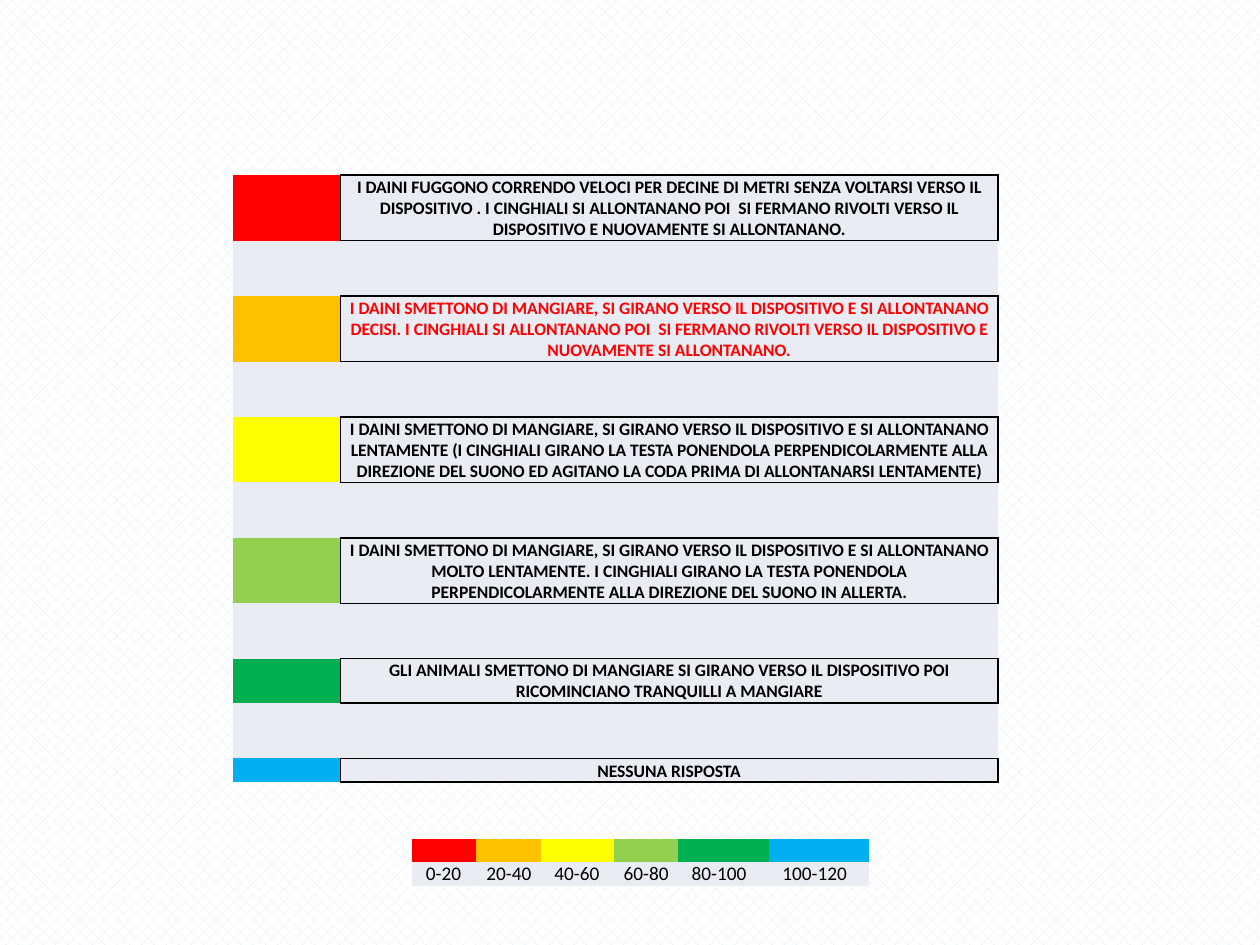
from lxml import etree
from pptx import Presentation
from pptx.dml.color import RGBColor
from pptx.enum.dml import MSO_PATTERN
from pptx.enum.text import MSO_ANCHOR, PP_ALIGN
from pptx.oxml.ns import qn
from pptx.util import Inches, Pt

PATTERN = MSO_PATTERN.PERCENT_30
CENTER, LEFT = PP_ALIGN.CENTER, PP_ALIGN.LEFT
BOTTOM, MIDDLE = MSO_ANCHOR.BOTTOM, MSO_ANCHOR.MIDDLE


def color(value):
    return RGBColor.from_string(value)


class SlideBuilder:
    font = "Calibri"
    black = "000000"
    panel = "E9ECF3"
    border_width = Pt(0.91)

    def __init__(self, deck):
        self.page = deck.slides.add_slide(deck.slide_layouts[6])

    def background(self, foreground, background):
        fill = self.page.background.fill
        fill.patterned()
        fill.pattern = PATTERN
        fill.fore_color.rgb = color(foreground)
        fill.back_color.rgb = color(background)

    def table(self, left, top, widths, heights):
        frame = self.page.shapes.add_table(
            len(heights), len(widths), Inches(left), Inches(top),
            Inches(sum(widths)), Inches(sum(heights)))
        table = frame.table
        table.first_row = table.horz_banding = False
        for column, width in zip(table.columns, widths):
            column.width = Inches(width)
        for row, height in zip(table.rows, heights):
            row.height = Inches(height)
        return table

    def borders(self, cell, sides):
        properties = cell._tc.get_or_add_tcPr()
        for side in "LRTB":
            line = etree.SubElement(properties, qn("a:ln" + side))
            if side in sides:
                line.set("w", str(self.border_width))
                solid = etree.SubElement(line, qn("a:solidFill"))
                etree.SubElement(solid, qn("a:srgbClr"), val=self.black)
            else:
                etree.SubElement(line, qn("a:noFill"))

    def blank_cell(self, cell, fill, sides=""):
        self.borders(cell, sides)
        cell.fill.solid()
        cell.fill.fore_color.rgb = color(fill)
        cell.margin_left = cell.margin_right = Inches(0.05)
        cell.margin_top = cell.margin_bottom = 0
        # Keep the empty line lower than the row
        paragraph = cell.text_frame.paragraphs[0]
        etree.SubElement(paragraph._p, qn("a:endParaRPr"), sz="600")

    def text_cell(self, cell, text, size, ink=black, bold=False,
                  align=CENTER, anchor=BOTTOM, sides=""):
        self.blank_cell(cell, self.panel, sides)
        cell.vertical_anchor = anchor
        paragraph = cell.text_frame.paragraphs[0]
        paragraph.text = text
        paragraph.alignment = align
        for span in paragraph.runs:
            span.font.name = self.font
            span.font.size = Pt(size)
            span.font.bold = bold
            span.font.color.rgb = color(ink)


# Fill, row height, text colour, anchor, reaction
REACTIONS = [
    ("FF0000", 0.52, "000000", BOTTOM,
     "I DAINI FUGGONO CORRENDO VELOCI PER DECINE DI METRI SENZA VOLTARSI VERSO IL "
     "DISPOSITIVO . I CINGHIALI SI ALLONTANANO POI  SI FERMANO RIVOLTI VERSO IL "
     "DISPOSITIVO E NUOVAMENTE SI ALLONTANANO."),
    ("FFC000", 0.52, "FF0000", BOTTOM,
     "I DAINI SMETTONO DI MANGIARE, SI GIRANO VERSO IL DISPOSITIVO E SI ALLONTANANO "
     "DECISI. I CINGHIALI SI ALLONTANANO POI  SI FERMANO RIVOLTI VERSO IL DISPOSITIVO E "
     "NUOVAMENTE SI ALLONTANANO."),
    ("FFFF00", 0.52, "000000", BOTTOM,
     "I DAINI SMETTONO DI MANGIARE, SI GIRANO VERSO IL DISPOSITIVO E SI ALLONTANANO "
     "LENTAMENTE (I CINGHIALI GIRANO LA TESTA PONENDOLA PERPENDICOLARMENTE ALLA "
     "DIREZIONE DEL SUONO ED AGITANO LA CODA PRIMA DI ALLONTANARSI LENTAMENTE)"),
    ("92D050", 0.52, "000000", BOTTOM,
     "I DAINI SMETTONO DI MANGIARE, SI GIRANO VERSO IL DISPOSITIVO E SI ALLONTANANO "
     "MOLTO LENTAMENTE. I CINGHIALI GIRANO LA TESTA PONENDOLA "
     "PERPENDICOLARMENTE ALLA DIREZIONE DEL SUONO IN ALLERTA."),
    ("00B050", 0.35, "000000", MIDDLE,
     "GLI ANIMALI SMETTONO DI MANGIARE SI GIRANO VERSO IL DISPOSITIVO POI "
     "RICOMINCIANO TRANQUILLI A MANGIARE"),
    ("00B0F0", 0.19, "000000", BOTTOM, "NESSUNA RISPOSTA"),
]
SPACER = 0.44

# Range, column width, left inset
RANGES = [("0-20", 0.51, 0.11), ("20-40", 0.51, 0.08), ("40-60", 0.58, 0.11),
          ("60-80", 0.51, 0.08), ("80-100", 0.72, 0.11), ("100-120", 0.8, 0.11)]


def main():
    deck = Presentation()
    deck.slide_width, deck.slide_height = Inches(10), Inches(7.5)
    builder = SlideBuilder(deck)
    builder.background("DEEBF7", "FFFFFF")

    # Reactions, with a spacer row between each pair
    heights = [SPACER] * (2 * len(REACTIONS) - 1)
    heights[::2] = [reaction[1] for reaction in REACTIONS]
    reactions = builder.table(1.85, 1.39, [0.85, 5.22], heights)
    for index, (fill, _, ink, anchor, text) in enumerate(REACTIONS):
        row = 2 * index
        builder.blank_cell(reactions.cell(row, 0), fill, "R")
        builder.text_cell(reactions.cell(row, 1), text, 10, ink, bold=True,
                          anchor=anchor, sides="LRTB")
    for row in range(1, len(heights), 2):
        builder.blank_cell(reactions.cell(row, 0), builder.panel)
        builder.blank_cell(reactions.cell(row, 1), builder.panel, "TB")

    # Colour scale
    scale = builder.table(3.27, 6.66, [item[1] for item in RANGES], [0.18, 0.19])
    for column, (label, _, inset) in enumerate(RANGES):
        builder.blank_cell(scale.cell(0, column), REACTIONS[column][0])
        cell = scale.cell(1, column)
        builder.text_cell(cell, label, 11, align=LEFT)
        cell.margin_left = Inches(inset)

    deck.save("out.pptx")


if __name__ == "__main__":
    main()
